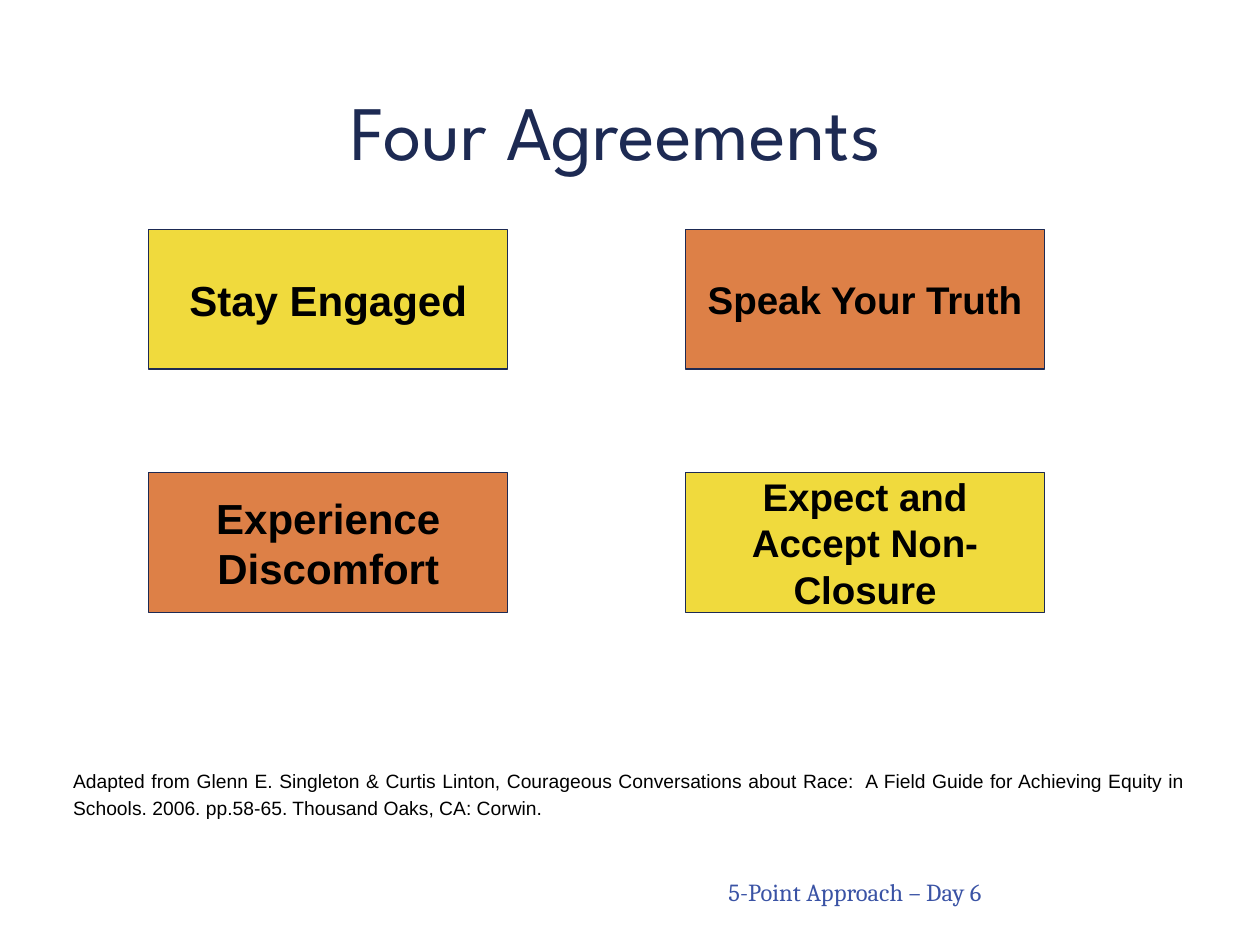
from pptx import Presentation
from pptx.dml.color import RGBColor
from pptx.enum.shapes import MSO_SHAPE
from pptx.enum.text import MSO_ANCHOR, MSO_AUTO_SIZE, PP_ALIGN
from pptx.oxml.ns import qn
from pptx.util import Inches, Pt

COLORS = {
    "navy": "1D2A53",
    "blue": "3A53A5",
    "yellow": "F0DA3D",
    "orange": "DD8047",
    "black": "000000",
}
# Grid of agreement cards, in inches
GRID_LEFT, GRID_TOP = 1.18, 1.82
COLUMN_STEP, ROW_STEP = 4.26, 1.93
CARD_WIDTH, CARD_HEIGHT = 2.85, 1.11


def color(name):
    return RGBColor.from_string(COLORS[name])


class SlideBuilder:
    """Holds the current slide and its text style."""

    def __init__(self, slide):
        self.slide = slide

    def place(self, shape, left, top, width, height):
        shape.left, shape.top = Inches(left), Inches(top)
        shape.width, shape.height = Inches(width), Inches(height)

    def set_text(self, shape, text, size, font, ink, align, anchor, bold=False, inset=0.05):
        frame = shape.text_frame
        frame.word_wrap = True
        frame.auto_size = MSO_AUTO_SIZE.NONE
        frame.vertical_anchor = anchor
        frame.margin_left = frame.margin_right = Inches(0.1)
        frame.margin_top = frame.margin_bottom = Inches(inset)
        frame.text = text
        para = frame.paragraphs[0]
        para.alignment = align
        para.space_before = Pt(0)
        para.font.size, para.font.name, para.font.bold = Pt(size), font, bold
        para.font.color.rgb = color(ink)
        return para

    def title(self, text):
        title = self.slide.shapes.title
        self.place(title, 2.68, 0.53, 5.04, 1)
        self.set_text(title, text, 44, "League Spartan", "navy", PP_ALIGN.LEFT, MSO_ANCHOR.MIDDLE)

    def citation(self, text):
        body = self.slide.placeholders[1]
        self.place(body, 0.48, 6.03, 9.03, 0.64)
        para = self.set_text(body, text, 11, "Arial", "black", PP_ALIGN.JUSTIFY, MSO_ANCHOR.TOP)
        para.line_spacing = 1.15
        properties = para._p.get_or_add_pPr()
        properties.set("marL", "0")
        properties.set("indent", "0")
        no_bullet = properties.makeelement(qn("a:buNone"), {})
        properties.insert_element_before(no_bullet, "a:tabLst", "a:defRPr", "a:extLst")

    def card(self, column, row, text, size, fill):
        card = self.slide.shapes.add_shape(
            MSO_SHAPE.RECTANGLE,
            Inches(GRID_LEFT + column * COLUMN_STEP),
            Inches(GRID_TOP + row * ROW_STEP),
            Inches(CARD_WIDTH),
            Inches(CARD_HEIGHT),
        )
        card.shadow.inherit = False
        card.fill.solid()
        card.fill.fore_color.rgb = color(fill)
        card.line.color.rgb = color("navy")
        card.line.width = Pt(0.75)
        self.set_text(card, text, size, "Arial", "black", PP_ALIGN.CENTER,
                      MSO_ANCHOR.MIDDLE, bold=True, inset=0.1)

    def footer(self, text):
        box = self.slide.shapes.add_textbox(
            Inches(2.32), Inches(6.6), Inches(5.57), Inches(0.64))
        self.set_text(box, text, 14, "Cambria", "blue", PP_ALIGN.RIGHT, MSO_ANCHOR.BOTTOM)


def main():
    deck = Presentation()
    deck.slide_width, deck.slide_height = Inches(10), Inches(7.5)
    builder = SlideBuilder(deck.slides.add_slide(deck.slide_layouts[1]))

    # Heading and footer
    builder.footer("5-Point Approach – Day 6")
    builder.title("Four Agreements")

    # Source of the agreements
    builder.citation(
        "Adapted from Glenn E. Singleton & Curtis Linton, Courageous Conversations "
        "about Race:  A Field Guide for Achieving Equity in Schools. 2006. pp.58-65. "
        "Thousand Oaks, CA: Corwin."
    )

    # Agreements, row by row in two columns
    agreements = [
        ("Stay Engaged", 24, "yellow"),
        ("Speak Your Truth", 22, "orange"),
        ("Experience Discomfort", 24, "orange"),
        ("Expect and Accept Non-Closure", 22, "yellow"),
    ]
    for index, (text, size, fill) in enumerate(agreements):
        row, column = divmod(index, 2)
        builder.card(column, row, text, size, fill)

    deck.save("out.pptx")


if __name__ == "__main__":
    main()
